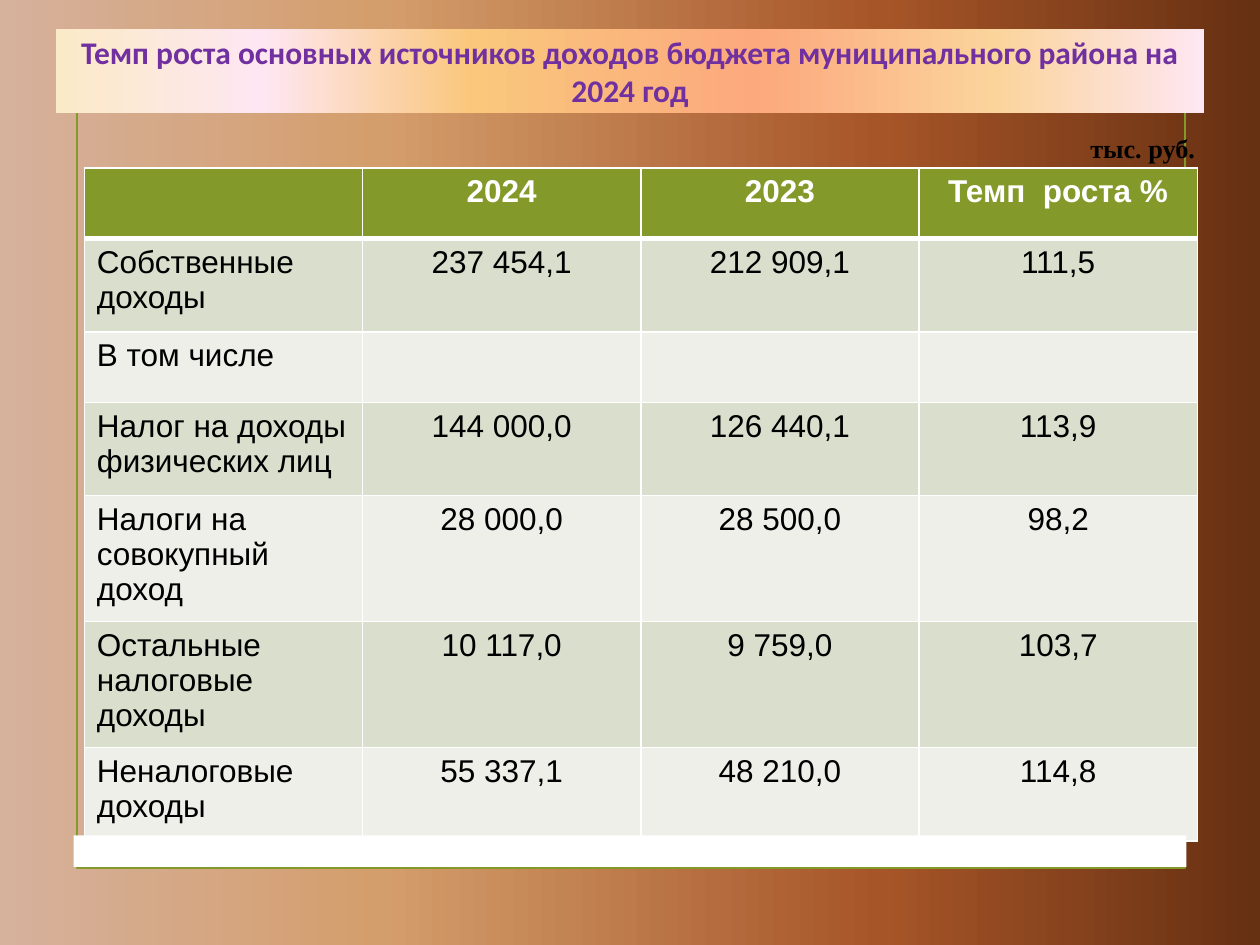
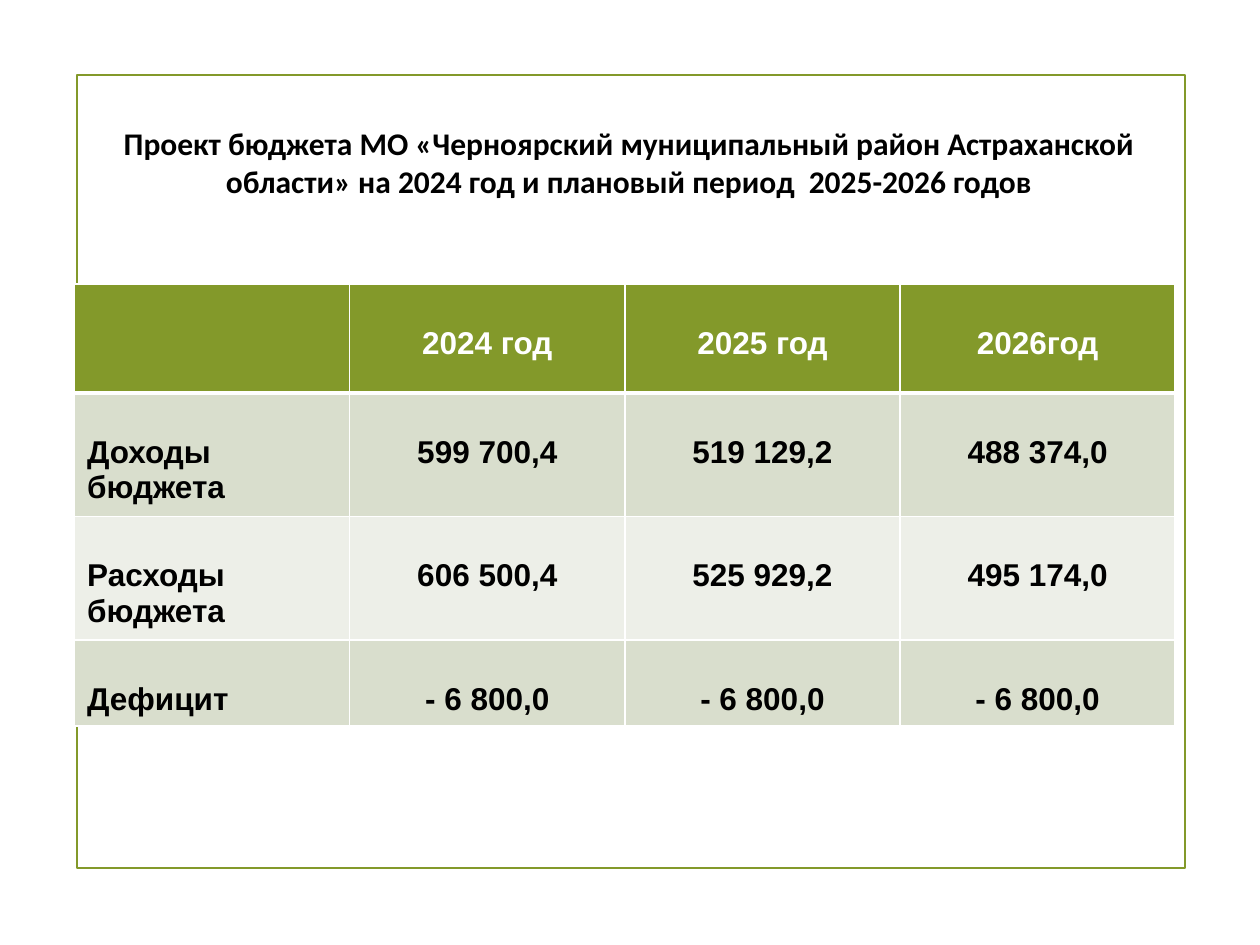
from lxml.etree import SubElement
from pptx import Presentation
from pptx.dml.color import RGBColor
from pptx.enum.shapes import MSO_SHAPE
from pptx.enum.text import MSO_ANCHOR, PP_ALIGN
from pptx.oxml import parse_xml
from pptx.oxml.ns import nsdecls, qn
from pptx.util import Pt

COLORS = {
    "olive": "83992A",
    "band_dark": "D9DECD",
    "band_light": "EDEFE8",
    "white": "FFFFFF",
    "black": "000000",
    "purple": "7030A0",
}
COPPER = [(0, "D6B19C"), (30, "D49E6C"), (70, "A65528"), (100, "663012")]
SUNRISE = [(0, "FBEAC7"), (18, "FEE7F2"), (36, "FAC77D"),
           (61, "FBA97D"), (82, "FBD49C"), (100, "FEE7F2")]

GROWTH_ROWS = [
    ("", "2024", "2023", "Темп  роста %"),
    ("Собственные доходы", "237 454,1", "212 909,1", "111,5"),
    ("В том числе", "", "", ""),
    ("Налог на доходы физических лиц", "144 000,0", "126 440,1", "113,9"),
    ("Налоги на совокупный доход", "28 000,0", "28 500,0", "98,2"),
    ("Остальные налоговые доходы", "10 117,0", "9 759,0", "103,7"),
    ("Неналоговые доходы", "55 337,1", "48 210,0", "114,8"),
]
BUDGET_ROWS = [
    ("", "2024 год", "2025 год", "2026год"),
    ("Доходы бюджета", "599 700,4", "519 129,2", "488 374,0"),
    ("Расходы бюджета", "606 500,4", "525 929,2", "495 174,0"),
    ("Дефицит", "- 6 800,0", "- 6 800,0", "- 6 800,0"),
]


def rgb(name):
    return RGBColor.from_string(COLORS[name])


def fill_gradient(fill, owner, stops):
    """Give fill a left-to-right gradient; owner is the element that holds it."""
    fill.gradient()
    fill.gradient_angle = 0
    stop_list = owner.find(".//" + qn("a:gsLst"))
    for stop in list(stop_list):
        stop_list.remove(stop)
    for percent, color in stops:
        stop = SubElement(stop_list, qn("a:gs"), pos=str(percent * 1000))
        SubElement(stop, qn("a:srgbClr"), val=color)


def write(frame, text, font, size, color, align, bold=True):
    frame.text = text
    paragraph = frame.paragraphs[0]
    paragraph.alignment = align
    for run in paragraph.runs:
        run.font.name, run.font.size, run.font.bold = font, Pt(size), bold
        run.font.color.rgb = rgb(color)


def add_box(slide, left, top, width, height, fill=None, line=None):
    box = slide.shapes.add_shape(MSO_SHAPE.RECTANGLE, Pt(left), Pt(top), Pt(width), Pt(height))
    box.shadow.inherit = False
    if fill:
        box.fill.solid()
        box.fill.fore_color.rgb = rgb(fill)
    else:
        box.fill.background()
    if line:
        box.line.color.rgb = rgb(line)
        box.line.width = Pt(1.25)
    else:
        box.line.fill.background()
    return box


def add_framed_slide(deck):
    slide = deck.slides.add_slide(deck.slide_layouts[6])
    add_box(slide, 44, 42.7, 633, 453.4, line="olive")
    return slide


def add_text(slide, text, left, top, width, height, font, size, color, align,
             anchor=MSO_ANCHOR.TOP):
    box = slide.shapes.add_textbox(Pt(left), Pt(top), Pt(width), Pt(height))
    frame = box.text_frame
    frame.word_wrap = True
    frame.vertical_anchor = anchor
    write(frame, text, font, size, color, align)
    return box


def add_title(slide, text, left, top, width, color):
    return add_text(slide, text, left, top, width, 48, "Calibri", 18, color,
                    PP_ALIGN.CENTER, MSO_ANCHOR.MIDDLE)


def set_borders(cell, top, bottom):
    properties = cell._tc.get_or_add_tcPr()
    widths = {"lnL": 1, "lnR": 1, "lnT": top, "lnB": bottom}
    for position, (side, width) in enumerate(widths.items()):
        properties.insert(position, parse_xml(
            f'<a:{side} {nsdecls("a")} w="{Pt(width)}"><a:solidFill>'
            f'<a:srgbClr val="{COLORS["white"]}"/></a:solidFill></a:{side}>'))


def add_budget_table(slide, rows, left, top, width, heights, bold_body, top_margin=3.6):
    columns = len(rows[0])
    table = slide.shapes.add_table(len(rows), columns, Pt(left), Pt(top),
                                   Pt(width), Pt(sum(heights))).table
    for column in table.columns:
        column.width = Pt(width / columns)
    for r, (values, height) in enumerate(zip(rows, heights)):
        table.rows[r].height = Pt(height)
        is_header = r == 0
        band = "olive" if is_header else ("band_light", "band_dark")[r % 2]
        for c, value in enumerate(values):
            cell = table.cell(r, c)
            cell.margin_top = Pt(top_margin)
            cell.fill.solid()
            cell.fill.fore_color.rgb = rgb(band)
            set_borders(cell, top=3 if r == 1 else 1, bottom=3 if is_header else 1)
            write(cell.text_frame, value, "Arial", 18, "white" if is_header else "black",
                  PP_ALIGN.CENTER if c else PP_ALIGN.LEFT, is_header or bold_body)


def build_growth_slide(deck):
    slide = add_framed_slide(deck)
    fill_gradient(slide.background.fill, slide._element, COPPER)
    title = add_title(slide, "Темп роста основных источников доходов бюджета "
                      "муниципального района на 2024 год", 32, 16.6, 656, "purple")
    fill_gradient(title.fill, title._element, SUNRISE)
    add_budget_table(slide, GROWTH_ROWS, 48.2, 96, 636,
                     [40.3, 53.3, 40.3, 53.3, 67.6, 69.8, 53.3], bold_body=False)
    add_text(slide, "тыс. руб.", 378, 72, 312, 21.6, "Times New Roman", 15, "black",
             PP_ALIGN.RIGHT)
    add_box(slide, 42, 477.4, 636, 18, fill="white")


def build_project_slide(deck):
    slide = add_framed_slide(deck)
    slide.background.fill.solid()
    slide.background.fill.fore_color.rgb = rgb("white")
    add_title(slide, "Проект бюджета МО «Черноярский муниципальный район Астраханской "
              "области» на 2024 год и плановый период  2025-2026 годов",
              28, 68.6, 663, "black")
    add_budget_table(slide, BUDGET_ROWS, 42.6, 162.2, 629, [62.4, 67.5, 67.5, 47.2],
                     bold_body=True, top_margin=23.8)


def main():
    deck = Presentation()
    deck.slide_width, deck.slide_height = Pt(720), Pt(540)
    build_growth_slide(deck)
    build_project_slide(deck)
    deck.save("out.pptx")


if __name__ == "__main__":
    main()
